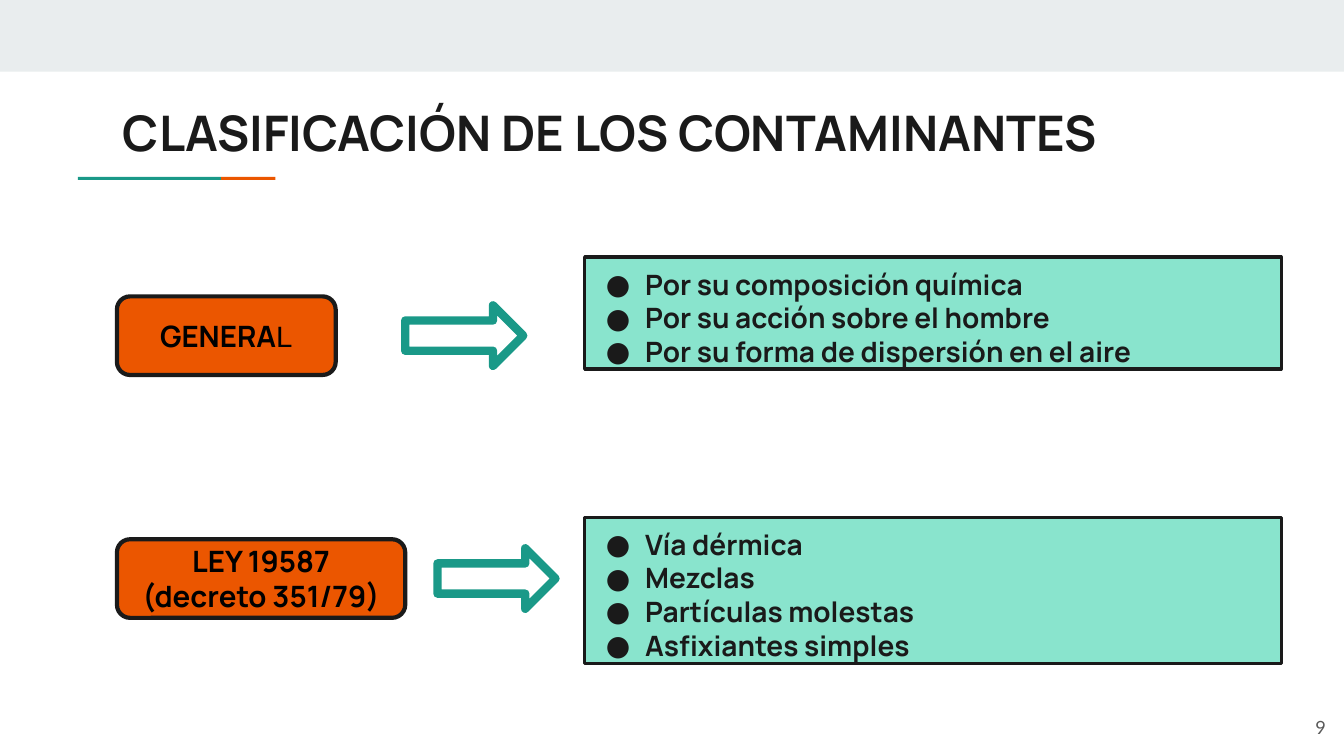
import pptx
import pptx.dml.color
import pptx.enum.shapes
import pptx.enum.text
import pptx.util
from dataclasses import dataclass
from lxml import etree
from pptx.oxml.ns import qn


@dataclass(frozen=True)
class Theme:
    ink: str = "1A1A1A"
    black: str = "000000"
    gray: str = "595959"
    band: str = "E9EDEE"
    orange: str = "EB5600"
    teal: str = "1A9988"
    mint: str = "89E4CD"
    font: str = "Manrope"
    title_size: int = 35
    label_size: int = 21
    list_size: int = 20
    number_size: int = 13


theme = Theme()
SHAPES = pptx.enum.shapes.MSO_SHAPE
ALIGN = pptx.enum.text.PP_ALIGN
MIDDLE = pptx.enum.text.MSO_ANCHOR.MIDDLE
AUTO_SIZE = pptx.enum.text.MSO_AUTO_SIZE

presentation = pptx.Presentation()
presentation.slide_width = pptx.util.Inches(13.33)
presentation.slide_height = pptx.util.Inches(7.5)
slide = presentation.slides.add_slide(presentation.slide_layouts[3])
title, *list_boxes = slide.placeholders


def paint(shape, percents, fill=None, line=None, width=0):
    sides = (presentation.slide_width, presentation.slide_height) * 2
    shape.left, shape.top, shape.width, shape.height = (
        round(side * percent / 100) for side, percent in zip(sides, percents)
    )
    if fill:
        shape.fill.solid()
        shape.fill.fore_color.rgb = pptx.dml.color.RGBColor.from_string(fill)
    else:
        shape.fill.background()
    if line:
        shape.line.color.rgb = pptx.dml.color.RGBColor.from_string(line)
        shape.line.width = pptx.util.Pt(width)
        etree.SubElement(shape.line._get_or_add_ln(), qn("a:round"))
    else:
        shape.line.fill.background()


def style(paragraph, size, color, font=theme.font, bold=True, align=ALIGN.CENTER):
    paragraph.alignment = align
    for run in paragraph.runs:
        run.font.name = font
        run.font.size = pptx.util.Pt(size)
        run.font.bold = bold
        run.font.color.rgb = pptx.dml.color.RGBColor.from_string(color)


decorations = [
    ((0, 0, 100, 9.47), theme.band),
    ((5.8, 23.4, 10.65, 0.4), theme.teal),
    ((16.45, 23.4, 4.05, 0.4), theme.orange),
]
for percents, color in decorations:
    decoration = slide.shapes.add_shape(SHAPES.RECTANGLE, 0, 0, 0, 0)
    decoration.shadow.inherit = False
    paint(decoration, percents, color)

paint(title, (3.38, 12.8, 84.08, 10.4))
title.text_frame.text = "CLASIFICACIÓN DE LOS CONTAMINANTES"
title.text_frame.vertical_anchor = MIDDLE
title.text_frame.auto_size = AUTO_SIZE.NONE
title.text_frame.paragraphs[0].line_spacing = 0.9
style(title.text_frame.paragraphs[0], theme.title_size, theme.ink)

number = slide.shapes.add_textbox(0, 0, 0, 0)
paint(number, (93.38, 92.4, 6, 7.6))
number.text_frame.word_wrap = True
number.text_frame.text = "9"
number.text_frame.vertical_anchor = MIDDLE
style(number.text_frame.paragraphs[0], theme.number_size, theme.gray, "Lato", False, ALIGN.RIGHT)

classes = [
    (["GENERA", "L"], 39.2, 16.28, 30.15, 34, 16.13,
     ["Por su composición química", "Por su acción sobre el hombre",
      "Por su forma de dispersión en el aire"]),
    (["LEY 19587 (decreto 351/79)"], 71.33, 21.45, 32.55, 68.4, 20.67,
     ["Vía dérmica", "Mezclas", "Partículas molestas", "Asfixiantes simples"]),
]
for list_box, row in zip(list_boxes, classes):
    label_runs, label_top, label_width, arrow_left, list_top, list_height, items = row

    label = slide.shapes.add_shape(SHAPES.ROUNDED_RECTANGLE, 0, 0, 0, 0)
    label.shadow.inherit = False
    paint(label, (8.7, label_top, label_width, 10.4), theme.orange, theme.ink, 3)
    label.text_frame.word_wrap = True
    label.text_frame.vertical_anchor = MIDDLE
    label_paragraph = label.text_frame.paragraphs[0]
    for text in label_runs:
        label_paragraph.add_run().text = text
    style(label_paragraph, theme.label_size, theme.black)
    for run in label_paragraph.runs[1:]:
        run.font.name = "Arial"
        run.font.bold = False

    arrow = slide.shapes.add_shape(SHAPES.RIGHT_ARROW, 0, 0, 0, 0)
    arrow.shadow.inherit = False
    paint(arrow, (arrow_left, label_top + 1.2, 8.78, 8), None, theme.teal, 6)

    paint(list_box, (43.5, list_top, 51.83, list_height), theme.mint, theme.ink, 2.25)
    list_box.text_frame.text = "\n".join(items)
    list_box.text_frame.auto_size = AUTO_SIZE.SHAPE_TO_FIT_TEXT
    for frame in (label.text_frame, list_box.text_frame):
        frame.margin_left = frame.margin_right = pptx.util.Inches(0.1)
        frame.margin_top = frame.margin_bottom = pptx.util.Inches(0.1)
    for paragraph in list_box.text_frame.paragraphs:
        properties = paragraph._p.get_or_add_pPr()
        properties.set("marL", str(pptx.util.Inches(0.5)))
        properties.set("indent", str(pptx.util.Inches(-0.39)))
        bullet_color = etree.SubElement(properties, qn("a:buClr"))
        etree.SubElement(bullet_color, qn("a:srgbClr"), val=theme.ink)
        etree.SubElement(properties, qn("a:buFont"), typeface=theme.font)
        etree.SubElement(properties, qn("a:buChar"), char="●")
        paragraph.space_before = pptx.util.Pt(0)
        style(paragraph, theme.list_size, theme.ink, align=ALIGN.LEFT)

presentation.save("out.pptx")
